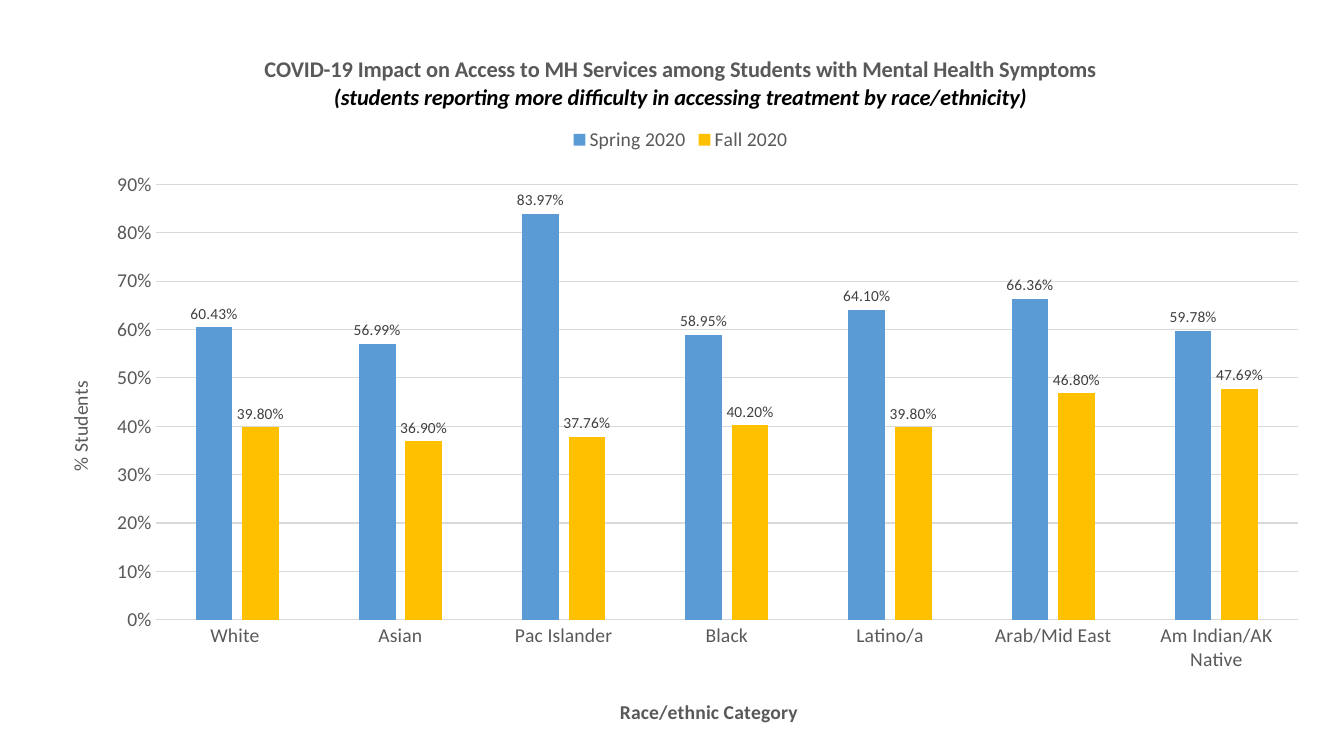
from lxml.etree import SubElement
from pptx import Presentation
from pptx.chart.data import CategoryChartData
from pptx.dml.color import RGBColor
from pptx.enum.chart import XL_CHART_TYPE as Type
from pptx.enum.chart import XL_LABEL_POSITION as LabelPos
from pptx.enum.chart import XL_LEGEND_POSITION as LegendPos
from pptx.enum.chart import XL_TICK_MARK as Tick
from pptx.oxml.ns import qn
from pptx.util import Inches, Pt

FONT = "Calibri"
GRAY, GRID, DARK, BLACK = "595959", "D9D9D9", "404040", "000000"
CATEGORIES = ["White ", "Asian", "Pac Islander", "Black", "Latino/a",
              "Arab/Mid East", "Am Indian/AK Native"]
TERMS = [
    ("Spring 2020", "5B9BD5", [0.6043, 0.5699, 0.8397, 0.5895, 0.641, 0.6636, 0.5978]),
    ("Fall 2020", "FFC000", [0.398, 0.369, 0.3776, 0.402, 0.398, 0.468, 0.4769]),
]


def rgb(value):
    return RGBColor.from_string(value)


def style_font(font, size, color, bold=False, italic=False):
    font.name, font.size = FONT, Pt(size)
    font.bold, font.italic = bold, italic
    font.color.rgb = rgb(color)


def style_line(line, color):
    line.color.rgb = rgb(color)
    line.width = Pt(0.75)


def add_title(owner, lines):
    tf = owner.text_frame
    for i, (text, size, color, bold, italic) in enumerate(lines):
        p = tf.add_paragraph() if i else tf.paragraphs[0]
        p.text = text
        style_font(p.runs[0].font, size, color, bold, italic)


def place(parent, x, y, w=None, h=None, inner=False):
    layout = parent.find(qn("c:layout"))
    if layout is None:
        layout = SubElement(parent, qn("c:layout"))
        first = parent.tag == qn("c:plotArea")
        parent.insert(0 if first else 1, layout)
    manual = SubElement(layout, qn("c:manualLayout"))
    settings = [("layoutTarget", "inner")] if inner else []
    settings += [("xMode", "edge"), ("yMode", "edge"), ("x", x), ("y", y)]
    settings += [("w", w), ("h", h)] if w else []
    for tag, value in settings:
        SubElement(manual, qn("c:" + tag)).set("val", str(value))


def format_axis(axis, title, bold=False):
    add_title(axis.axis_title, [(title, 14, GRAY, bold, False)])
    axis.major_tick_mark = axis.minor_tick_mark = Tick.NONE
    style_font(axis.tick_labels.font, 14, GRAY)


def format_series(series, color):
    series.format.fill.solid()
    series.format.fill.fore_color.rgb = rgb(color)
    series.invert_if_negative = False
    labels = series.data_labels
    labels.show_value = True
    labels.position = LabelPos.OUTSIDE_END
    labels.number_format, labels.number_format_is_linked = "0.00%", False
    style_font(labels.font, 11, DARK)


def add_access_chart(slide):
    data = CategoryChartData(number_format="0.00%")
    data.categories = CATEGORIES
    for name, _, values in TERMS:
        data.add_series(name, values)
    chart = slide.shapes.add_chart(
        Type.COLUMN_CLUSTERED, Inches(0.37), Inches(0.32),
        Inches(12.76), Inches(6.99), data).chart
    style_font(chart.font, 14, BLACK)
    chart.has_title = True
    add_title(chart.chart_title, [
        ("COVID-19 Impact on Access to MH Services among Students "
         "with Mental Health Symptoms", 16, GRAY, True, False),
        ("(students reporting more difficulty in accessing treatment "
         "by race/ethnicity)", 16, BLACK, True, True),
    ])

    plot = chart.plots[0]
    plot.gap_width, plot.overlap, plot.vary_by_categories = 219, -27, False
    for series, (_, color, _) in zip(plot.series, TERMS):
        format_series(series, color)

    format_axis(chart.category_axis, "Race/ethnic Category", bold=True)
    style_line(chart.category_axis.format.line, GRID)
    value = chart.value_axis
    format_axis(value, "% Students")
    value.minimum_scale, value.maximum_scale, value.major_unit = 0, 0.9, 0.1
    value.tick_labels.number_format = "0%"
    value.tick_labels.number_format_is_linked = False
    value.format.line.fill.background()
    style_line(value.major_gridlines.format.line, GRID)

    chart.has_legend = True
    chart.legend.position = LegendPos.TOP
    chart.legend.include_in_layout = False
    style_font(chart.legend.font, 14, GRAY)
    return chart


def arrange(chart):
    root = chart.element
    place(root.find(".//" + qn("c:plotArea")), 0.092, 0.216, 0.888, 0.618, inner=True)
    place(root.find(".//" + qn("c:catAx")).find(qn("c:title")), 0.45, 0.94)
    place(root.find(".//" + qn("c:valAx")).find(qn("c:title")), 0.02, 0.49)


def main():
    prs = Presentation()
    prs.slide_width, prs.slide_height = Inches(13.33), Inches(7.5)
    slide = prs.slides.add_slide(prs.slide_layouts[6])
    arrange(add_access_chart(slide))
    prs.save("out.pptx")


if __name__ == "__main__":
    main()
